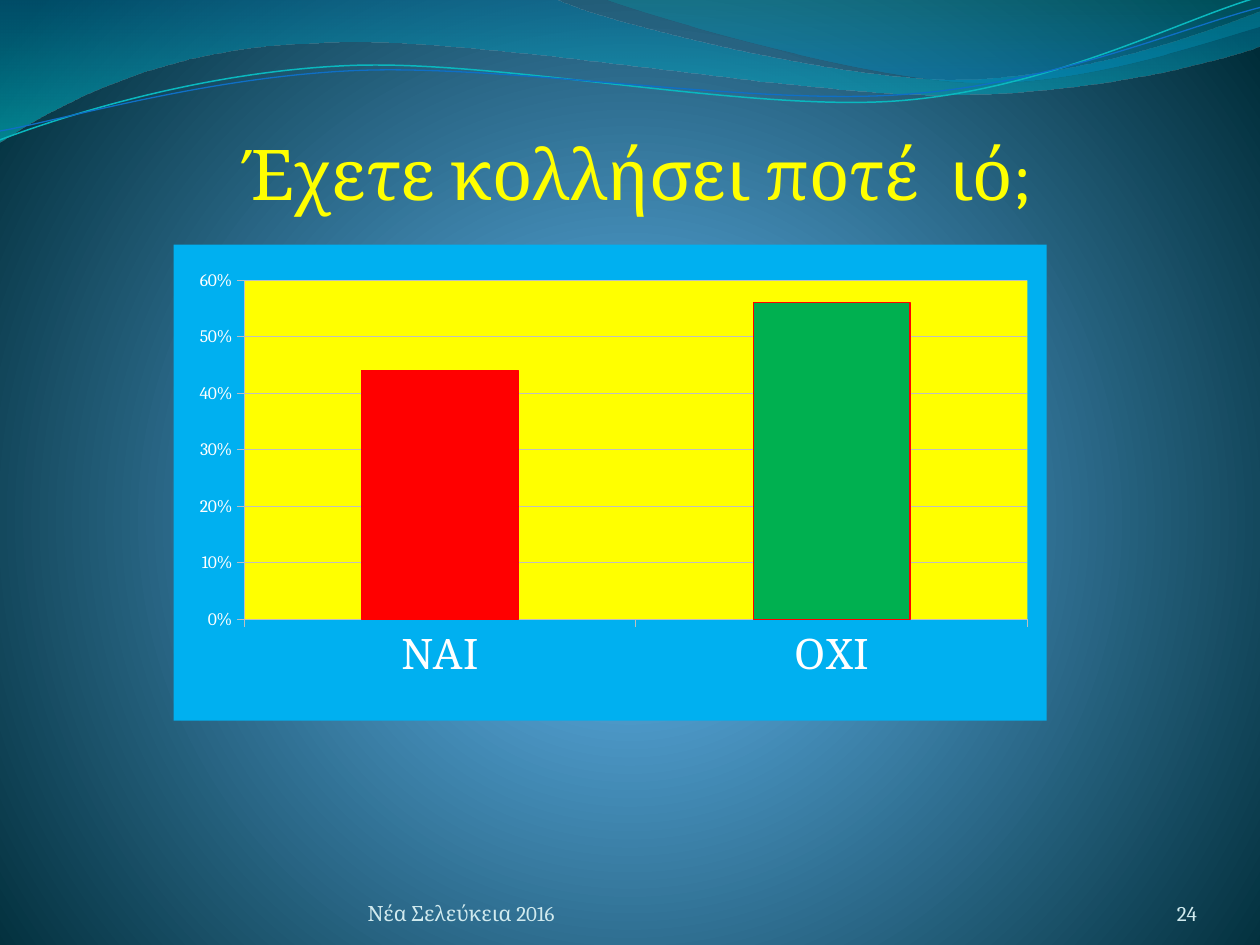
from collections import namedtuple
from math import cos, radians, sin

from pptx import Presentation
from pptx.chart.data import CategoryChartData
from pptx.dml.color import RGBColor
from pptx.enum.chart import XL_CHART_TYPE, XL_TICK_MARK
from pptx.enum.text import MSO_ANCHOR, MSO_AUTO_SIZE, PP_ALIGN
from pptx.oxml import parse_xml
from pptx.oxml.ns import nsdecls, qn
from pptx.util import Cm, Pt

Box = namedtuple("Box", "left top width height")
FONT = "Cambria"
STRAND_TILT = -2.7

# Waves in tenths of the slide width: start, then curves (3 points) or lines (1 point)
LEFT_WAVE = [
    [(0, 0)], [(4.4, -0.01)], [(4.76, 0.17), (6.64, 0.63), (7.58, 0.63)],
    [(8.53, 0.63), (9.58, 0.26), (10, 0.09)], [(10.01, 0.36)],
    [(9.83, 0.44), (8.7, 0.76), (7.46, 0.75)],
    [(6.22, 0.75), (3.82, 0.28), (2.57, 0.34)],
    [(1.29, 0.36), (0.46, 0.83), (-0.01, 1.13)], [(0, 0)],
]
RIGHT_WAVE = [
    [(4.79, -0.01)], [(5.09, 0.11), (6.82, 0.62), (7.69, 0.65)],
    [(8.56, 0.69), (9.61, 0.32), (10, 0.21)], [(10, 0)], [(4.79, -0.01)],
]
TEAL_STRAND = [
    [(0, 1.11)], [(0.48, 0.93), (1.58, 0.57), (2.77, 0.52)],
    [(3.95, 0.47), (5.93, 0.89), (7.13, 0.8)],
    [(8.33, 0.71), (9.38, 0.15), (9.98, -0.02)],
]
BLUE_STRAND = [
    [(0, 1.04)], [(0.47, 0.96), (1.64, 0.61), (2.83, 0.56)],
    [(4.03, 0.51), (5.97, 0.84), (7.17, 0.75)],
    [(8.36, 0.67), (9.41, 0.21), (10, 0.06)],
]


def rgb(value):
    return RGBColor.from_string(value)


def set_gradient(fill, properties, stops, direction):
    """Fill with (position, colour, opacity) stops, all in percent."""
    fill.solid()
    stop_xml = "".join(
        f'<a:gs pos="{pos * 1000}"><a:srgbClr val="{color}">'
        f'<a:alpha val="{opacity * 1000}"/></a:srgbClr></a:gs>'
        for pos, color, opacity in stops)
    gradient = parse_xml(f'<a:gradFill {nsdecls("a")} rotWithShape="1">'
                         f'<a:gsLst>{stop_xml}</a:gsLst>{direction}</a:gradFill>')
    properties.replace(properties.find(qn("a:solidFill")), gradient)


def untilt(segments, center, tilt):
    """Turn the points back, so that the shape's own rotation restores them."""
    turn, (cx, cy) = radians(-tilt), center
    return [[(cx + (x - cx) * cos(turn) - (y - cy) * sin(turn),
              cy + (x - cx) * sin(turn) + (y - cy) * cos(turn)) for x, y in segment]
            for segment in segments]


def add_outline(slide, box, segments, close):
    unit = box.width / 10
    points = [(box.left + x * unit, box.top + y * unit)
              for segment in segments for x, y in segment]
    builder = slide.shapes.build_freeform(*points[0])
    builder.add_line_segments(points[1:], close=close)
    outline = builder.convert_to_shape()
    outline.shadow.inherit = False
    # Join each run of three line ends into one curve
    line_ends = iter(outline.element.findall(".//" + qn("a:lnTo")))
    for segment in segments[1:]:
        ends = [next(line_ends) for _ in segment]
        if len(ends) == 3:
            curve = parse_xml(f'<a:cubicBezTo {nsdecls("a")}/>')
            ends[0].addprevious(curve)
            for end in ends:
                curve.append(end[0])
                end.getparent().remove(end)
    return outline


def add_backdrop(slide, box):
    # Radial background
    fill = slide.background.fill
    fill.solid()
    set_gradient(fill, slide.element.find(".//" + qn("p:bgPr")),
                 [(0, "4AA0D6", 100), (25, "4C98C7", 100), (100, "002C38", 100)],
                 '<a:path path="circle"><a:fillToRect l="10000" t="110000" '
                 'r="10000" b="100000"/></a:path>')
    # Translucent waves
    for segments, stops in (
        (LEFT_WAVE, [(0, "0074A1", 45), (100, "00C6CF", 55)]),
        (RIGHT_WAVE, [(0, "00A1A9", 30), (80, "008BBF", 45)]),
    ):
        wave = add_outline(slide, box, segments, True)
        set_gradient(wave.fill, wave.element.spPr, stops, '<a:lin ang="5400000" scaled="0"/>')
        wave.line.fill.background()
    # Thin strands
    for segments, center, color, weight in (
        (TEAL_STRAND, (4.99, 0.58), "0AB8BF", 0.85),
        (BLUE_STRAND, (5, 0.59), "0F6FC6", 0.75),
    ):
        strand = add_outline(slide, box, untilt(segments, center, STRAND_TILT), False)
        strand.rotation = STRAND_TILT
        strand.fill.background()
        strand.line.color.rgb = rgb(color)
        strand.line.width = Pt(weight)


def add_label(slide, box, text, size, color, align=PP_ALIGN.LEFT, frame_format=None):
    frame = slide.shapes.add_textbox(*box).text_frame
    for name, value in {"word_wrap": True, **(frame_format or {})}.items():
        setattr(frame, name, value)
    paragraph = frame.paragraphs[0]
    paragraph.alignment = align
    run = paragraph.add_run()
    run.text = text
    for name, value in {"size": Pt(size), "name": FONT}.items():
        setattr(run.font, name, value)
    run.font.color.rgb = rgb(color)


def add_footer(slide, box):
    flush = {"vertical_anchor": MSO_ANCHOR.BOTTOM, "margin_left": 0, "margin_right": 0,
             "margin_top": 0, "margin_bottom": 0}
    number_width = Cm(2.11)
    number_left = box.left + box.width - number_width
    add_label(slide, Box(box.left, box.top, Cm(9.32), box.height),
              "Νέα Σελεύκεια 2016", 12, "D1EAEE", frame_format=flush)
    add_label(slide, Box(number_left, box.top, number_width, box.height),
              "24", 12, "D1EAEE", PP_ALIGN.RIGHT, flush)


def fill_area(area, color):
    """Give the chart space or plot area a plain fill."""
    properties = parse_xml(f'<c:spPr {nsdecls("c", "a")}><a:solidFill>'
                           f'<a:srgbClr val="{color}"/></a:solidFill></c:spPr>')
    text = area.find(qn("c:txPr"))
    if text is None:
        area.append(properties)
    else:
        text.addprevious(properties)


def add_answers_chart(slide, box):
    answers = CategoryChartData(number_format="0%")
    answers.categories = ["ΝΑΙ", "ΟΧΙ"]
    answers.add_series("Series 1", (0.44, 0.56))
    chart = slide.shapes.add_chart(XL_CHART_TYPE.COLUMN_CLUSTERED, *box, answers).chart
    chart.has_legend = False
    chart.has_title = False
    chart.font.size = Pt(10)
    chart.font.name = FONT
    chart.font.color.rgb = rgb("FFFFFF")

    # Bars
    plot = chart.plots[0]
    plot.gap_width = 150
    plot.vary_by_categories = False
    series = plot.series[0]
    bars = [series.points[index].format for index in (0, 1)]
    for bar, color in zip(bars, ("FF0000", "00B050")):
        bar.fill.solid()
        bar.fill.fore_color.rgb = rgb(color)
    for part in (series.format, *bars):
        part.line.color.rgb = rgb("FF0000")
        part.line.width = Pt(0.75)

    # Axes
    percent = chart.value_axis
    for name, value in {"minimum_scale": 0, "maximum_scale": 0.6, "major_unit": 0.1,
                        "has_major_gridlines": True}.items():
        setattr(percent, name, value)
    percent.tick_labels.number_format = "0%"
    percent.tick_labels.number_format_is_linked = False
    percent.major_gridlines.format.line.color.rgb = rgb("BFBFBF")
    for axis in (percent, chart.category_axis):
        axis.major_tick_mark = XL_TICK_MARK.OUTSIDE
        axis.format.line.color.rgb = rgb("BFBFBF")
    labels = chart.category_axis.tick_labels.font
    for name, value in {"size": Pt(24), "name": FONT}.items():
        setattr(labels, name, value)
    labels.color.rgb = rgb("FFFFFF")

    # Fills and plot position, in percent of the chart
    plot_area = chart.element.find(".//" + qn("c:plotArea"))
    fill_area(chart.element, "00B0F0")
    fill_area(plot_area, "FFFF00")
    place = "".join(f'<c:{key} val="{value}"/>' for key, value in (
        ("layoutTarget", "inner"), ("xMode", "edge"), ("yMode", "edge"),
        ("x", 8.1 / 100), ("y", 7.5 / 100), ("w", 89.7 / 100), ("h", 71.2 / 100)))
    for layout in plot_area.findall(qn("c:layout")):
        plot_area.remove(layout)
    plot_area.insert(0, parse_xml(f'<c:layout {nsdecls("c")}><c:manualLayout>{place}'
                                  '</c:manualLayout></c:layout>'))


def main():
    deck = Presentation()
    deck.slide_width, deck.slide_height = Cm(25.4), Cm(19.05)
    slide = deck.slides.add_slide(deck.slide_layouts[6])
    add_backdrop(slide, Box(0, 0, deck.slide_width, deck.slide_height))
    add_label(slide, Box(Cm(4.7), Cm(2.51), Cm(17), Cm(1.96)),
              "Έχετε κολλήσει ποτέ  ιό;", 40, "FFFF00",
              frame_format={"auto_size": MSO_AUTO_SIZE.SHAPE_TO_FIT_TEXT})
    add_answers_chart(slide, Box(Cm(3.5), Cm(4.93), Cm(17.6), Cm(9.6)))
    add_footer(slide, Box(Cm(7.41), Cm(17.65), Cm(16.72), Cm(1.02)))
    deck.save("out.pptx")


if __name__ == "__main__":
    main()
